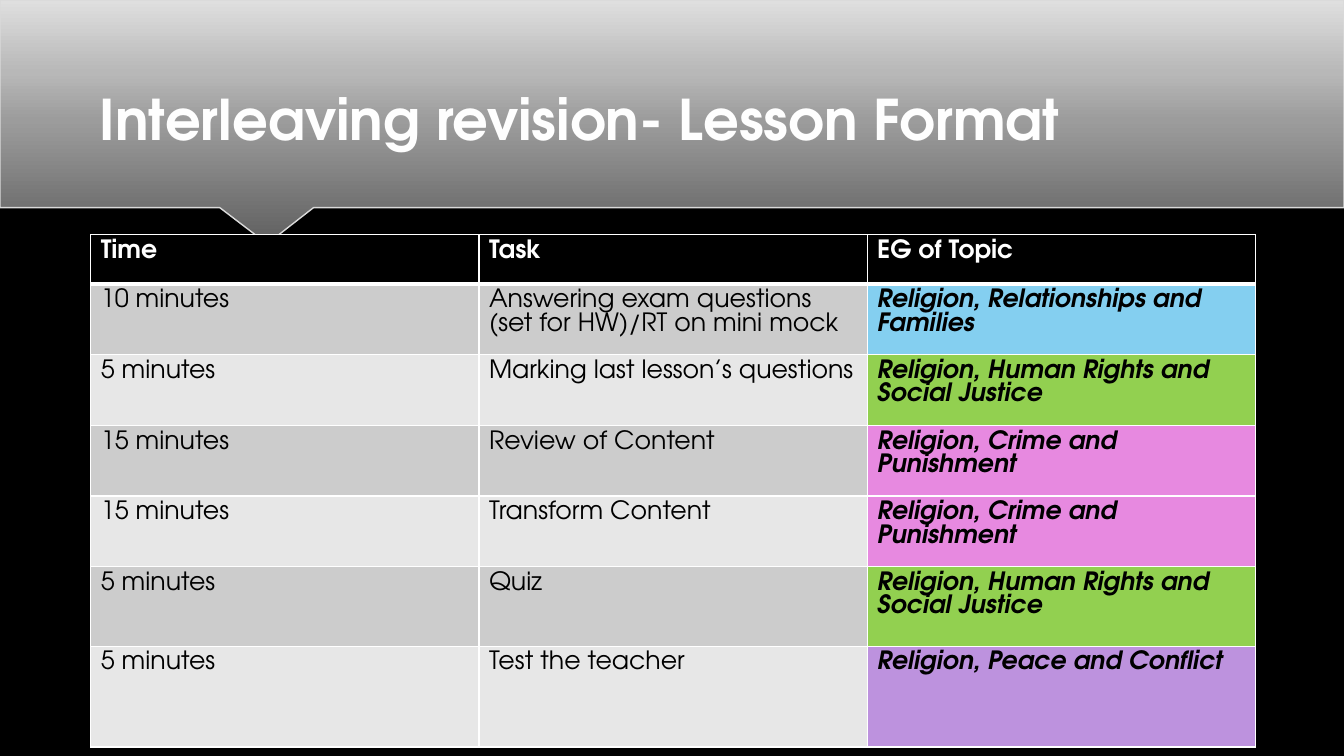
from lxml import etree
from pptx import Presentation
from pptx import util as u
from pptx.dml.color import RGBColor
from pptx.enum import text

Inches, Pt = u.Inches, u.Pt
FONT = "TeX Gyre Adventor"
NS = 'xmlns:a="http://schemas.openxmlformats.org/drawingml/2006/main"'


def hue(code):
    return RGBColor.from_string(code)


def style(para, size, code, bold=True, slant=False):
    for run in para.runs:
        font = run.font
        font.name, font.size = FONT, Pt(size)
        font.bold, font.italic = bold, slant
        font.color.rgb = hue(code)


prs = Presentation()
prs.slide_width, prs.slide_height = Inches(13.33), Inches(7.5)
slide = prs.slides.add_slide(prs.slide_layouts[6])
slide.background.fill.solid()
slide.background.fill.fore_color.rgb = hue("000000")

# Banner with a rounded pointer
pen = slide.shapes.build_freeform(Inches(13.33), 0)
edge = [(0, 0), (0, 2.06), (2.18, 2.06), (2.6, 2.38), (2.62, 2.39),
        (2.67, 2.39), (2.7, 2.38), (3.11, 2.06), (13.33, 2.06)]
pen.add_line_segments([(Inches(x), Inches(y)) for x, y in edge])
banner = pen.convert_to_shape()
banner.line.color.rgb = hue("DADADA")
banner.line.width = Pt(1)
stops = [(0, "616161"), (50, "9C9C9C"), (70, "B8B8B8"), (100, "DFDFDF")]
marks = "".join(f'<a:gs pos="{pos * 1000}"><a:srgbClr val="{code}"/></a:gs>'
                for pos, code in stops)
grad = etree.fromstring(f'<a:gradFill {NS} rotWithShape="1"><a:gsLst>{marks}</a:gsLst>'
                        '<a:lin ang="16200000" scaled="0"/></a:gradFill>')
shade = (f'<a:effectLst {NS}><a:outerShdw blurRad="{Pt(4)}" dist="{Pt(3)}" '
         'dir="5400000" rotWithShape="0"><a:srgbClr val="000000">'
         '<a:alpha val="35000"/></a:srgbClr></a:outerShdw></a:effectLst>')
props = banner.line._ln.getparent()
banner.line._ln.addprevious(grad)
banner.line._ln.addnext(etree.fromstring(shade))

# Title
title = slide.shapes.add_textbox(Inches(0.89), Inches(0.49), Inches(11.56), Inches(1.06))
frame = title.text_frame
frame.word_wrap = True
frame.vertical_anchor = text.MSO_ANCHOR.BOTTOM
frame.text = "Interleaving revision- Lesson Format"
style(frame.paragraphs[0], 40, "FEFEFE")
look = frame.paragraphs[0].runs[0]._r.get_or_add_rPr()
look[0].addnext(etree.fromstring(shade))

# Lesson table: time, task, topic, topic colour
crime = ("Religion, Crime and Punishment", "E789E0")
rights = ("Religion, Human Rights and Social Justice", "92D050")
rows = [
    ("Time", "Task", "EG of Topic", "000000"),
    ("10 minutes", "Answering exam questions (set for HW)/RT on mini mock",
     "Religion, Relationships and Families", "84CFF0"),
    ("5 minutes", "Marking last lesson’s questions", *rights),
    ("15 minutes", "Review of Content", *crime),
    ("15 minutes", "Transform Content", *crime),
    ("5 minutes", "Quiz", *rights),
    ("5 minutes", "Test the teacher", "Religion, Peace and Conflict", "BD92DE"),
]
highs = [0.49, 0.7, 0.67, 0.7, 0.7, 0.79, 1]
grid = slide.shapes.add_table(len(rows), 3, Inches(0.9), Inches(2.33),
                              Inches(11.54), Inches(sum(highs))).table
for col in grid.columns:
    col.width = Inches(3.85)
for r, (row, high) in enumerate(zip(rows, highs)):
    grid.rows[r].height = Inches(high)
    band = "000000" if r == 0 else "CCCCCC" if r % 2 else "E7E7E7"
    for c in range(3):
        cell = grid.cell(r, c)
        cell.text = row[c]
        head, topic = r == 0, c == 2
        style(cell.text_frame.paragraphs[0], 18, "FFFFFF" if head else "000000",
              head or topic, topic and not head)
        cell.fill.solid()
        cell.fill.fore_color.rgb = hue(row[3] if topic else band)
        # White borders, thick under the header
        for i, side in enumerate("LRTB"):
            thick = (head and side == "B") or (r == 1 and side == "T")
            line = (f'<a:ln{side} {NS} w="{Pt(3 if thick else 1)}"><a:solidFill>'
                    f'<a:srgbClr val="FFFFFF"/></a:solidFill></a:ln{side}>')
            cell._tc.get_or_add_tcPr().insert(i, etree.fromstring(line))

prs.save("out.pptx")
